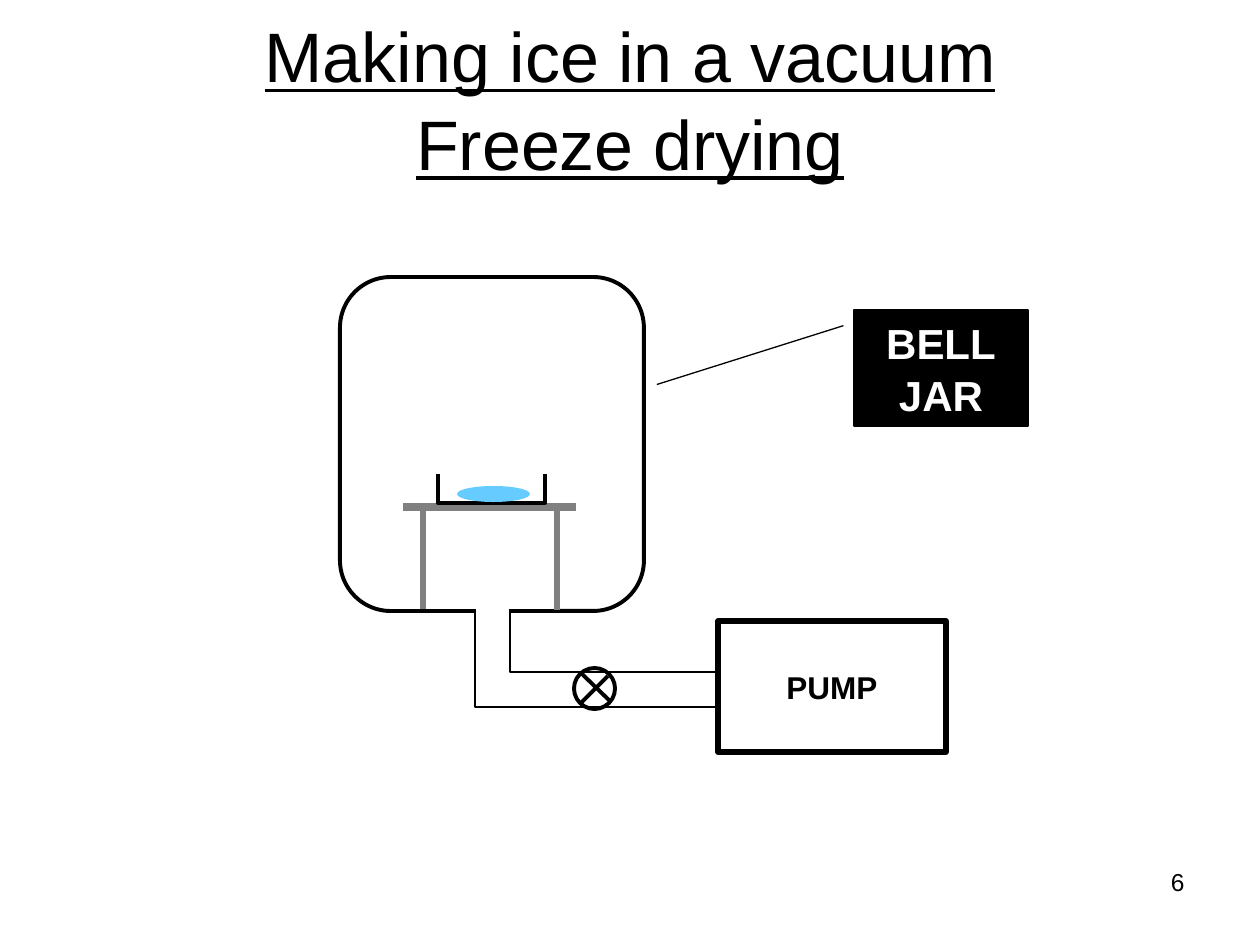
from pptx import Presentation
from pptx import util as u
from pptx.dml.color import RGBColor
from pptx.enum import shapes, text
from pptx.oxml.ns import qn
from lxml import etree

PX = 914400 / 126
BLACK = RGBColor(0x00, 0x00, 0x00)
WHITE = RGBColor(0xFF, 0xFF, 0xFF)
GREY = RGBColor(0x80, 0x80, 0x80)
WATER = RGBColor(0x66, 0xCC, 0xFF)
KIND = shapes.MSO_SHAPE
ALIGN = text.PP_ALIGN
ANCHOR = text.MSO_ANCHOR


def px(*lengths):
    return [u.Emu(round(length * PX)) for length in lengths]


def set_all(target, values):
    for name, value in values.items():
        setattr(target, name, value)


def paint(shape, fill=None, line=None, width=1):
    """Give a shape its fill and outline; None leaves either out."""
    shape.shadow.inherit = False
    if fill is None:
        shape.fill.background()
    else:
        shape.fill.solid()
        shape.fill.fore_color.rgb = fill
    if line is None:
        shape.line.fill.background()
    else:
        shape.line.color.rgb = line
        shape.line.width = u.Pt(width)


def write(shape, lines, size, color=BLACK, align=ALIGN.CENTER,
          anchor=ANCHOR.MIDDLE, spacing=1.0, **font):
    frame = shape.text_frame
    set_all(frame, {"word_wrap": True, "auto_size": text.MSO_AUTO_SIZE.NONE,
                    "vertical_anchor": anchor})
    frame.text = lines
    for para in frame.paragraphs:
        set_all(para, {"alignment": align, "line_spacing": spacing})
        for span in para.runs:
            set_all(span.font, {"name": "Arial", "size": u.Pt(size), **font})
            span.font.color.rgb = color


def add_preset(parent, kind, box, **look):
    shape = parent.shapes.add_shape(kind, *px(*box))
    paint(shape, **look)
    return shape


def add_line(parent, ends, color, width):
    line = parent.shapes.add_connector(shapes.MSO_CONNECTOR.STRAIGHT, *px(*ends))
    line.line.color.rgb = color
    line.line.width = u.Pt(width)
    etree.SubElement(line._element.spPr, qn("a:effectLst"))


def add_open_path(parent, points, width):
    start, *rest = [px(*point) for point in points]
    builder = parent.shapes.build_freeform(*start)
    builder.add_line_segments(rest, close=False)
    paint(builder.convert_to_shape(), line=BLACK, width=width)


def add_title(page):
    title = page.shapes.title
    box = px(0, 0, 1260, 194)
    set_all(title, dict(zip(("left", "top", "width", "height"), box)))
    title.fill.solid()
    title.fill.fore_color.rgb = WHITE
    write(title, "Making ice in a vacuum\vFreeze drying", 40,
          spacing=1.04, underline=True)


def add_jar(rig):
    jar = add_preset(rig, KIND.ROUNDED_RECTANGLE, (340, 277, 304, 334),
                     line=BLACK, width=2.25)
    jar.adjustments[0] = 0.167


def add_table_and_dish(rig):
    add_line(rig, (403, 507, 576, 507), GREY, 4.5)
    add_line(rig, (423, 507, 423, 609), GREY, 3)
    add_line(rig, (557, 509, 557, 610), GREY, 3)
    add_open_path(rig, [(438, 474), (438, 503), (545, 503), (545, 474)], 2.25)
    add_preset(rig, KIND.OVAL, (457, 486, 73, 16), fill=WATER)


def add_pipe_and_valve(rig):
    add_open_path(rig, [(510, 611), (510, 672), (727, 672)], 1.5)
    add_open_path(rig, [(475, 610), (475, 707), (732, 707)], 1.5)
    add_line(rig, (476, 613, 509, 613), WHITE, 6)
    add_preset(rig, KIND.OVAL, (574, 668, 41, 41), line=BLACK, width=2.25)
    add_line(rig, (582, 674, 611, 702), BLACK, 2.25)
    add_line(rig, (608, 676, 581, 703), BLACK, 2.25)


def add_pump(rig):
    pump = add_preset(rig, KIND.RECTANGLE, (718, 621, 228, 131),
                      fill=WHITE, line=BLACK, width=3)
    write(pump, "PUMP", 18, bold=True)


def add_jar_label(page):
    label = add_preset(page, KIND.LINE_CALLOUT_1, (854, 310, 174, 116),
                       fill=BLACK, line=BLACK, width=0.75)
    for index, value in enumerate((0.136, -0.061, 0.643, -1.133)):
        label.adjustments[index] = value
    write(label, "BELL\nJAR", 24, WHITE, spacing=1.04, bold=True)


def add_page_number(page):
    number = page.shapes.add_textbox(*px(903, 861, 294, 66))
    write(number, "6", 14, align=ALIGN.RIGHT, anchor=ANCHOR.TOP)


def main():
    deck = Presentation()
    deck.slide_width, deck.slide_height = px(1260, 945)
    page = deck.slides.add_slide(deck.slide_layouts[5])
    add_page_number(page)
    add_title(page)
    rig = page.shapes.add_group_shape()
    for add_part in (add_jar, add_table_and_dish, add_pipe_and_valve, add_pump):
        add_part(rig)
    add_jar_label(page)
    deck.save("out.pptx")


if __name__ == "__main__":
    main()
